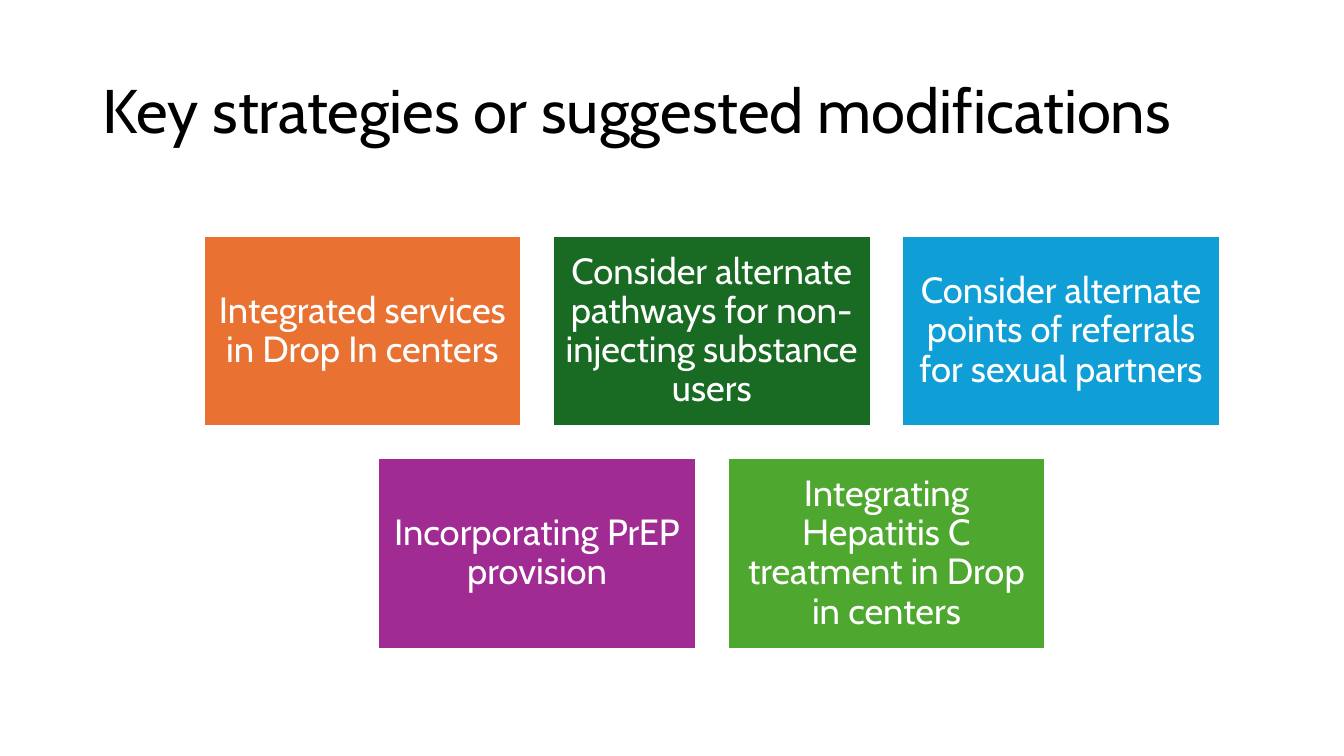
import pptx
import pptx.dml.color
import pptx.enum.shapes
import pptx.enum.text
import pptx.util

SLIDE_W, SLIDE_H = 13.33, 7.5
STRATEGY_ROWS = [
    [("Integrated services in Drop In centers", "E97132"),
     ("Consider alternate pathways for non-injecting substance users", "196B24"),
     ("Consider alternate points of referrals for sexual partners", "0F9ED5")],
    [("Incorporating PrEP provision", "A02B93"),
     ("Integrating Hepatitis C treatment in Drop in centers", "4EA72E")],
]


def color(hex_string):
    return pptx.dml.color.RGBColor.from_string(hex_string)


class StrategySlide:
    font = "Cabin"
    title_size, card_size = 44, 26
    black, white = "000000", "FFFFFF"
    grid_left, grid_top, columns = 2.02, 2.34, 3
    card_w, card_h = 3.15, 1.89
    gap = card_w / 10
    inset = 0.11

    def __init__(self, prs):
        self.slide = prs.slides.add_slide(prs.slide_layouts[5])

    def set_text(self, sp, text, size, hex_string, align):
        tf = sp.text_frame
        tf.text = text
        tf.word_wrap = True
        tf.auto_size = pptx.enum.text.MSO_AUTO_SIZE.NONE
        tf.vertical_anchor = pptx.enum.text.MSO_ANCHOR.MIDDLE
        p = tf.paragraphs[0]
        p.alignment = align
        p.line_spacing = 0.9
        font = p.runs[0].font
        font.name = self.font
        font.size = pptx.util.Pt(size)
        font.color.rgb = color(hex_string)

    def title(self, text):
        sp = self.slide.shapes.title
        sp.left, sp.top, sp.width, sp.height = map(
            pptx.util.Inches, (0.92, 0.4, 11.5, 1.45))
        self.set_text(sp, text, self.title_size, self.black,
                      pptx.enum.text.PP_ALIGN.LEFT)

    def card(self, column, row, text, fill):
        """Place a card on the grid; column may be fractional."""
        left = self.grid_left + column * (self.card_w + self.gap)
        top = self.grid_top + row * (self.card_h + self.gap)
        sp = self.slide.shapes.add_shape(
            pptx.enum.shapes.MSO_SHAPE.RECTANGLE,
            *map(pptx.util.Inches, (left, top, self.card_w, self.card_h)))
        sp.shadow.inherit = False
        sp.fill.solid()
        sp.fill.fore_color.rgb = color(fill)
        sp.line.color.rgb = color(self.white)
        sp.line.width = pptx.util.Pt(1.5)
        tf = sp.text_frame
        tf.margin_left = tf.margin_right = pptx.util.Inches(self.inset)
        tf.margin_top = tf.margin_bottom = pptx.util.Inches(self.inset)
        self.set_text(sp, text, self.card_size, self.white,
                      pptx.enum.text.PP_ALIGN.CENTER)

    def card_row(self, row, cards):
        """Centre a row of cards across the grid's columns."""
        first = (self.columns - len(cards)) / 2
        for i, (text, fill) in enumerate(cards):
            self.card(first + i, row, text, fill)


def main():
    prs = pptx.Presentation()
    prs.slide_width = pptx.util.Inches(SLIDE_W)
    prs.slide_height = pptx.util.Inches(SLIDE_H)
    s = StrategySlide(prs)
    s.title("Key strategies or suggested modifications")
    for row, cards in enumerate(STRATEGY_ROWS):
        s.card_row(row, cards)
    prs.save("out.pptx")


if __name__ == "__main__":
    main()
